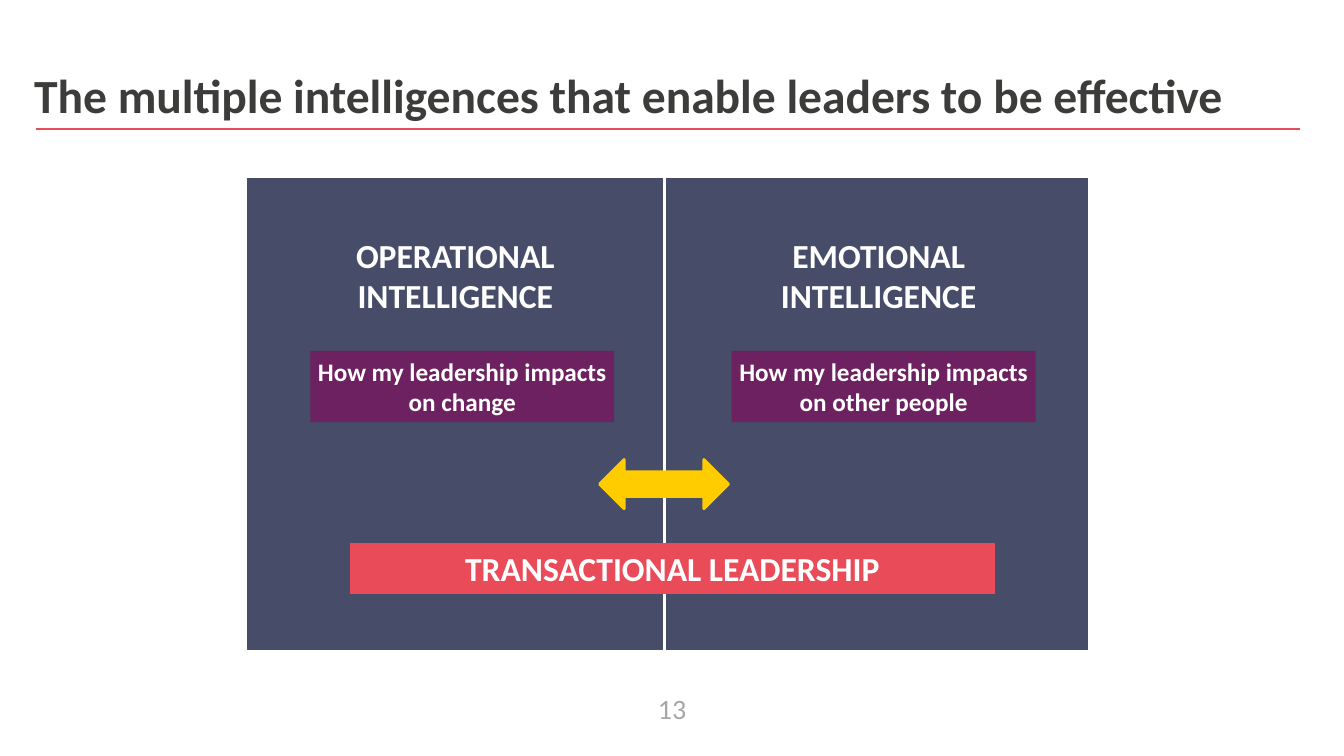
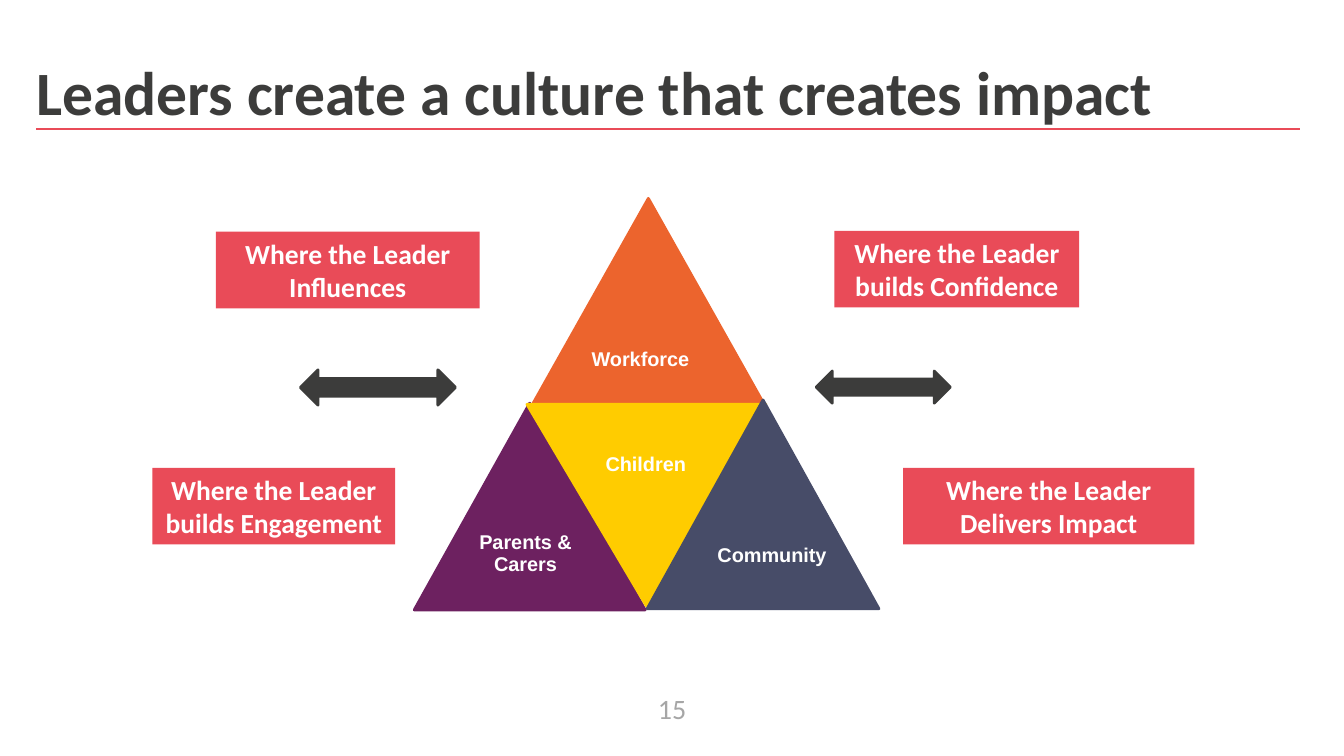
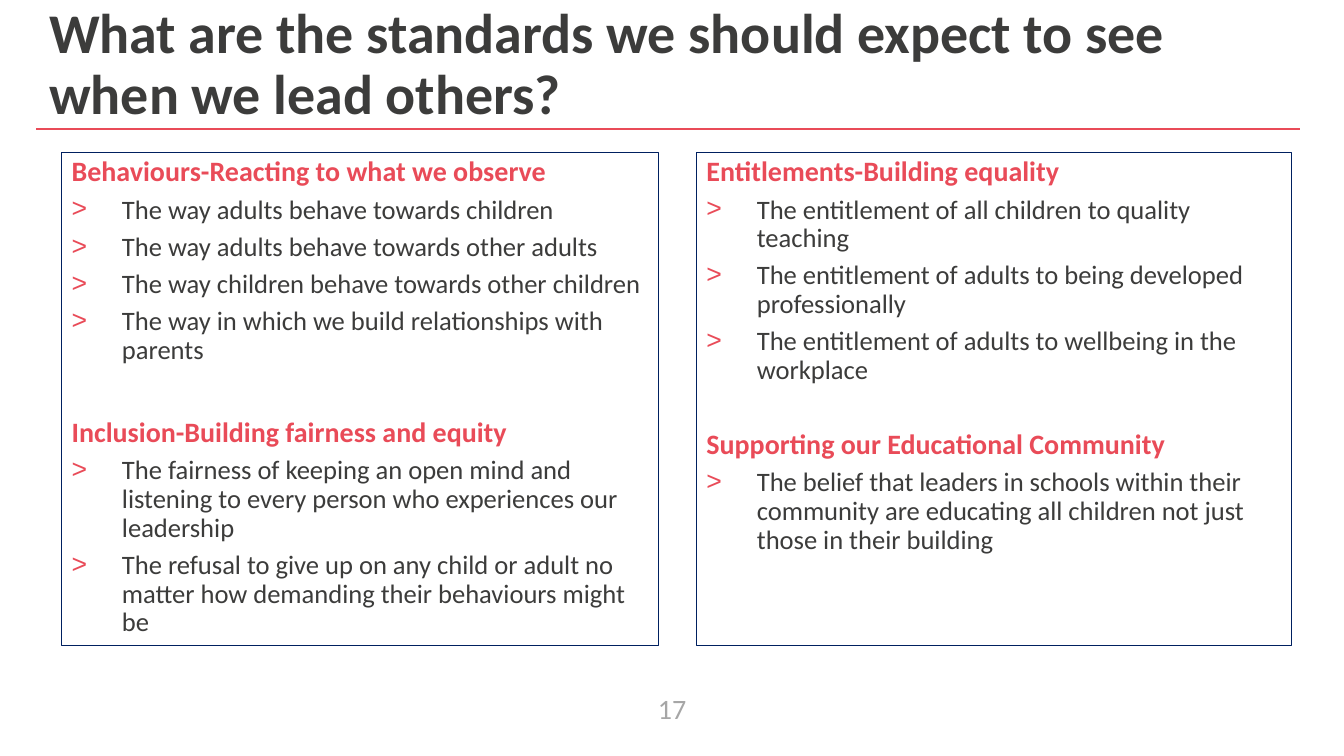
from lxml import etree
from pptx import Presentation
from pptx.dml.color import RGBColor
from pptx.enum import shapes, text
from pptx.oxml import ns
from pptx.util import Cm, Pt

INK, RED, NAVY, PURPLE = "3C3C3B", "E94B58", "474C68", "6D2160"
YELLOW, ORANGE, WHITE, GREY, FRAME = "FFCC00", "EC642D", "FFFFFF", "A6A6A6", "002060"
TITLE_ONLY, TWO_CONTENT = 5, 3
SHAPE = shapes.MSO_SHAPE
ALIGN = text.PP_ALIGN
ANCHOR = text.MSO_ANCHOR


def rgb(value):
    return RGBColor.from_string(value)


def lengths(*values):
    return [Cm(value) for value in values]


def place(shape, *bounds):
    shape.left, shape.top, shape.width, shape.height = lengths(*bounds)


def style(para, size, color, bold=True, name="Calibri", align=ALIGN.LEFT, spacing=1.0, before=0):
    para.alignment = align
    para.line_spacing = spacing
    para.space_before = Pt(before)
    para.space_after = Pt(0)
    para.font.size = Pt(size)
    para.font.name = name
    para.font.bold = bold
    para.font.color.rgb = rgb(color)


def write(shape, words, size, color=WHITE, margins=(0.1, 0.12), anchor=ANCHOR.MIDDLE,
          align=ALIGN.CENTER, **looks):
    """Fill a shape with one formatted paragraph."""
    frame = shape.text_frame
    frame.word_wrap = True
    frame.auto_size = text.MSO_AUTO_SIZE.NONE
    frame.vertical_anchor = anchor
    frame.margin_left = frame.margin_right = Cm(margins[0])
    frame.margin_top = frame.margin_bottom = Cm(margins[1])
    frame.text = words
    style(frame.paragraphs[0], size, color, align=align, **looks)


def label(page, bounds, words, size, **looks):
    box = page.shapes.add_textbox(*lengths(*bounds))
    write(box, words, size, **looks)


def block(page, kind, bounds, fill, line=None, width=2):
    """Add a flat preset shape, outlined only when a line colour is given."""
    shape = page.shapes.add_shape(kind, *lengths(*bounds))
    shape.shadow.inherit = False
    shape.fill.solid()
    shape.fill.fore_color.rgb = rgb(fill)
    if line:
        shape.line.color.rgb = rgb(line)
        shape.line.width = Pt(width)
    else:
        shape.line.fill.background()
    return shape


def caption(page, bounds, words, size, fill):
    write(block(page, SHAPE.RECTANGLE, bounds, fill), words, size)


def start_page(deck, layout, title, size, bounds, number, anchor=ANCHOR.TOP):
    """Add a page with its title, the red rule and the page number."""
    page = deck.slides.add_slide(deck.slide_layouts[layout])
    rule = page.shapes.add_connector(
        shapes.MSO_CONNECTOR.STRAIGHT, *lengths(0.91, 3.25, 32.77, 3.25))
    rule.line.color.rgb = rgb(RED)
    rule.line.width = Pt(1.5)
    etree.SubElement(rule._element.spPr, ns.qn("a:effectLst"))
    label(page, (13.13, 17.35, 7.62, 1.02), number, 20, color=GREY, bold=False)
    place(page.shapes.title, *bounds)
    write(page.shapes.title, title, size, color=INK, margins=(0.25, 0.13),
          anchor=anchor, align=ALIGN.LEFT, spacing=0.9)
    return page


def set_bullet(para, shown):
    """Give a paragraph a red arrowhead bullet, or none; headings start at the edge."""
    props = para._p.get_or_add_pPr()
    props.set("marL", str(Cm(1.27)))
    props.set("indent", str(-Cm(1.27)))
    if not shown:
        etree.SubElement(props, ns.qn("a:buNone"))
        return
    color = etree.SubElement(props, ns.qn("a:buClr"))
    etree.SubElement(color, ns.qn("a:srgbClr"), val=RED)
    etree.SubElement(props, ns.qn("a:buFont"), typeface="Arial")
    etree.SubElement(props, ns.qn("a:buChar"), char="˃")


def framed_list(box, bounds, sections, gap):
    """Write headed bullet lists, with gap points above each later heading."""
    place(box, *bounds)
    box.line.color.rgb = rgb(FRAME)
    box.line.width = Pt(0.75)
    frame = box.text_frame
    frame.auto_size = text.MSO_AUTO_SIZE.NONE
    frame.vertical_anchor = ANCHOR.TOP
    for index, (heading, items) in enumerate(sections):
        para = frame.add_paragraph() if index else frame.paragraphs[0]
        para.text = heading
        set_bullet(para, False)
        style(para, 20, RED, spacing=0.9, before=gap if index else 0)
        for item in items:
            para = frame.add_paragraph()
            para.text = item
            set_bullet(para, True)
            style(para, 19, INK, bold=False, spacing=0.9, before=6)


def intelligences(deck):
    page = start_page(
        deck, TITLE_ONLY, "The multiple intelligences that enable leaders to be effective",
        34, (0.61, 1.9, 32.28, 1.12), "13", ANCHOR.MIDDLE)
    halves = [
        (6.2, 10.57, 6.81, 7.82, "OPERATIONAL INTELLIGENCE",
         "How my leadership impacts on change"),
        (16.74, 10.72, 17.48, 18.44, "EMOTIONAL INTELLIGENCE",
         "How my leadership impacts on other people"),
    ]
    for left, width, heading_left, caption_left, heading, impact in halves:
        block(page, SHAPE.RECTANGLE, (left, 4.45, width, 11.96), NAVY, WHITE)
        label(page, (heading_left, 5.77, 9.33, 2.31), heading, 24)
        caption(page, (caption_left, 8.84, 7.66, 1.8), impact, 18, PURPLE)
    banner = block(page, SHAPE.RECTANGLE, (8.84, 13.69, 16.21, 1.27), RED, RED, 1)
    write(banner, "TRANSACTIONAL LEADERSHIP", 24)
    block(page, SHAPE.LEFT_RIGHT_ARROW, (15.11, 11.58, 3.25, 1.24), YELLOW, YELLOW)


def culture(deck):
    page = start_page(
        deck, TITLE_ONLY, "Leaders create a culture that creates impact",
        44, (0.66, 1.45, 31.88, 2.08), "15")
    pyramid = page.shapes.add_group_shape()
    looks = dict(name="Arial", spacing=0.9, margins=(0.1, 0.1))
    top = block(pyramid, SHAPE.ISOSCELES_TRIANGLE, (13.28, 5, 6.12, 5.44), ORANGE, ORANGE)
    write(top, "Workforce", 14.2, align=ALIGN.LEFT, **looks)
    lower = [
        ((10.44, 10.16, 5.82, 5.21), PURPLE, 0, "Parents & Carers", (11.76, 13.26, 2.97, 1.4)),
        ((13.28, 10.19, 6.02, 5.08), YELLOW, 180, "Children", (14.94, 11.28, 2.67, 0.86)),
        ((16.31, 10.08, 5.84, 5.26), NAVY, 0, "Community", (17.83, 13.64, 3.25, 0.76)),
    ]
    for bounds, color, turn, words, label_bounds in lower:
        triangle = block(pyramid, SHAPE.ISOSCELES_TRIANGLE, bounds, color, color)
        triangle.rotation = turn
        label(pyramid, label_bounds, words, 14.2, **looks)
    roles = [
        (5.44, 5.84, 6.65, "Influences"),
        (21.03, 5.82, 6.17, "builds Confidence"),
        (3.84, 11.79, 6.12, "builds Engagement"),
        (22.76, 11.79, 7.34, "Delivers Impact"),
    ]
    for left, upper, width, role in roles:
        caption(page, (left, upper, width, 1.93), f"Where the Leader {role}", 19.7, RED)
    for bounds in [(7.57, 9.32, 3.91, 0.89), (20.57, 9.35, 3.38, 0.81)]:
        block(page, SHAPE.LEFT_RIGHT_ARROW, bounds, INK, INK)


def standards(deck):
    page = start_page(
        deck, TWO_CONTENT, "What are the standards we should expect to see when we lead others?",
        40, (0.99, 0, 31.88, 2.79), "17")
    framed_list(page.placeholders[1], (1.55, 3.84, 15.04, 12.42), [
        ("Behaviours-Reacting to what we observe", [
            "The way adults behave towards children",
            "The way adults behave towards other adults",
            "The way children behave towards other children",
            "The way in which we build relationships with parents"]),
        ("Inclusion-Building fairness and equity", [
            "The fairness of keeping an open mind and listening to every person "
            "who experiences our leadership",
            "The refusal to give up on any child or adult no matter how demanding "
            "their behaviours might be"]),
    ], 38)
    framed_list(page.placeholders[2], (17.55, 3.84, 14.99, 12.42), [
        ("Entitlements-Building equality", [
            "The entitlement of all children to quality teaching",
            "The entitlement of adults to being developed professionally",
            "The entitlement of adults to wellbeing in the workplace"]),
        ("Supporting our Educational Community", [
            "The belief that leaders in schools within their community are educating "
            "all children not just those in their building"]),
    ], 32)


def main():
    deck = Presentation()
    deck.slide_width, deck.slide_height = lengths(33.87, 19.05)
    intelligences(deck)
    culture(deck)
    standards(deck)
    deck.save("out.pptx")


if __name__ == "__main__":
    main()
